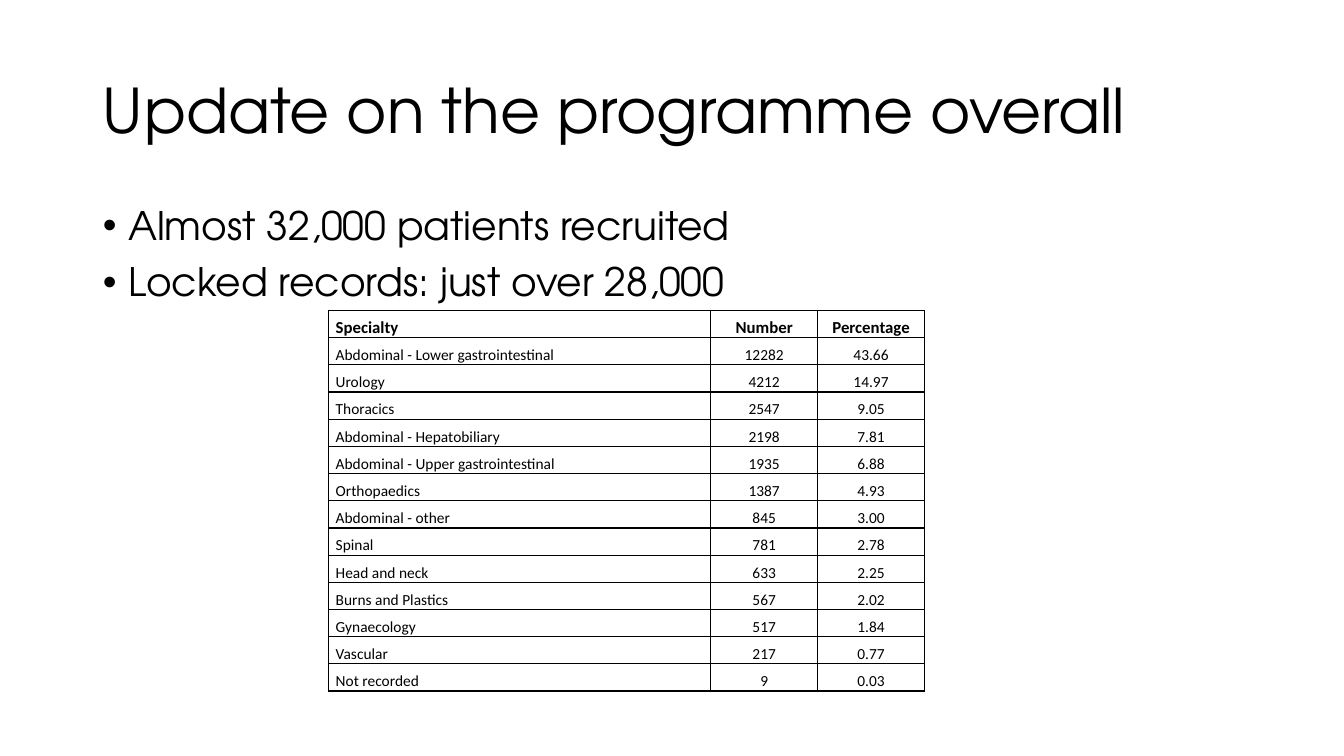
from lxml.etree import SubElement
from pptx import Presentation
from pptx.dml.color import RGBColor
from pptx.enum.text import MSO_ANCHOR, MSO_AUTO_SIZE, PP_ALIGN
from pptx.oxml.ns import qn
from pptx.util import Inches, Pt

BLACK = RGBColor(0, 0, 0)
WHITE = RGBColor(255, 255, 255)

BULLETS = ["Almost 32,000 patients recruited", "Locked records: just over 28,000"]
SPECIALTIES = [
    ("Specialty", "Number", "Percentage"),
    ("Abdominal - Lower gastrointestinal", "12282", "43.66"),
    ("Urology", "4212", "14.97"),
    ("Thoracics", "2547", "9.05"),
    ("Abdominal - Hepatobiliary", "2198", "7.81"),
    ("Abdominal - Upper gastrointestinal", "1935", "6.88"),
    ("Orthopaedics", "1387", "4.93"),
    ("Abdominal - other", "845", "3.00"),
    ("Spinal", "781", "2.78"),
    ("Head and neck", "633", "2.25"),
    ("Burns and Plastics", "567", "2.02"),
    ("Gynaecology", "517", "1.84"),
    ("Vascular", "217", "0.77"),
    ("Not recorded", "9", "0.03"),
]


def set_attributes(target, values):
    for name, value in values.items():
        setattr(target, name, value)


class SlideBuilder:
    heading_font = "TeX Gyre Adventor"
    table_font = "Calibri"

    def __init__(self, presentation):
        self.slide = presentation.slides.add_slide(presentation.slide_layouts[1])

    def format_font(self, font, name, size, bold=False):
        set_attributes(font, {"name": name, "size": Pt(size), "bold": bold})
        font.color.rgb = BLACK

    def place(self, shape, left, top, width, height, anchor):
        set_attributes(shape, {"left": Inches(left), "top": Inches(top),
                               "width": Inches(width), "height": Inches(height)})
        set_attributes(shape.text_frame, {"word_wrap": True, "vertical_anchor": anchor,
                                          "auto_size": MSO_AUTO_SIZE.NONE})

    def add_title(self, text, *box):
        title = self.slide.shapes.title
        self.place(title, *box, MSO_ANCHOR.MIDDLE)
        title.text_frame.text = text
        paragraph = title.text_frame.paragraphs[0]
        set_attributes(paragraph, {"alignment": PP_ALIGN.LEFT, "line_spacing": 0.9})
        self.format_font(paragraph.runs[0].font, self.heading_font, 44)

    def add_bullets(self, items, *box):
        body = self.slide.placeholders[1]
        self.place(body, *box, MSO_ANCHOR.TOP)
        body.text_frame.text = "\n".join(items)
        for paragraph in body.text_frame.paragraphs:
            set_attributes(paragraph, {"line_spacing": 0.9, "space_before": Pt(10)})
            self.format_font(paragraph.runs[0].font, self.heading_font, 28)
            properties = paragraph._p.get_or_add_pPr()
            properties.set("marL", str(Inches(0.25)))
            properties.set("indent", str(Inches(-0.25)))
            SubElement(properties, qn("a:buFont"), typeface="Arial")
            SubElement(properties, qn("a:buChar"), char="•")

    def add_table(self, rows, left, top, column_widths, row_height):
        frame = self.slide.shapes.add_table(
            len(rows), len(column_widths), Inches(left), Inches(top),
            Inches(sum(column_widths)), Inches(row_height * len(rows)))
        table = frame.table
        table.horz_banding = False
        for column, width in zip(table.columns, column_widths):
            column.width = Inches(width)
        for row_index, values in enumerate(rows):
            table.rows[row_index].height = Inches(row_height)
            for column_index, value in enumerate(values):
                self.fill_cell(table.cell(row_index, column_index), value,
                               header=row_index == 0, centred=column_index > 0)

    def fill_cell(self, cell, text, header, centred):
        cell.text = text
        set_attributes(cell, {"margin_left": Inches(0.07), "margin_right": Inches(0.07),
                              "margin_top": 0, "margin_bottom": 0,
                              "vertical_anchor": MSO_ANCHOR.BOTTOM})
        paragraph = cell.text_frame.paragraphs[0]
        paragraph.alignment = PP_ALIGN.CENTER if centred else PP_ALIGN.LEFT
        self.format_font(paragraph.runs[0].font, self.table_font, 12 if header else 11, header)
        self.add_borders(cell)
        cell.fill.solid()
        cell.fill.fore_color.rgb = WHITE

    def add_borders(self, cell):
        properties = cell._tc.get_or_add_tcPr()
        for side in ("a:lnL", "a:lnR", "a:lnT", "a:lnB"):
            line = SubElement(properties, qn(side), w=str(Pt(1)))
            fill = SubElement(line, qn("a:solidFill"))
            SubElement(fill, qn("a:srgbClr"), val=str(BLACK))


def main():
    presentation = Presentation()
    set_attributes(presentation, {"slide_width": Inches(13.33), "slide_height": Inches(7.5)})
    builder = SlideBuilder(presentation)
    builder.add_title("Update on the programme overall", 0.92, 0.4, 11.5, 1.45)
    builder.add_bullets(BULLETS, 0.92, 2, 11.5, 4.76)
    builder.add_table(SPECIALTIES, 3.26, 3.08, (3.79, 1.06, 1.06), 0.27)
    presentation.save("out.pptx")


if __name__ == "__main__":
    main()
